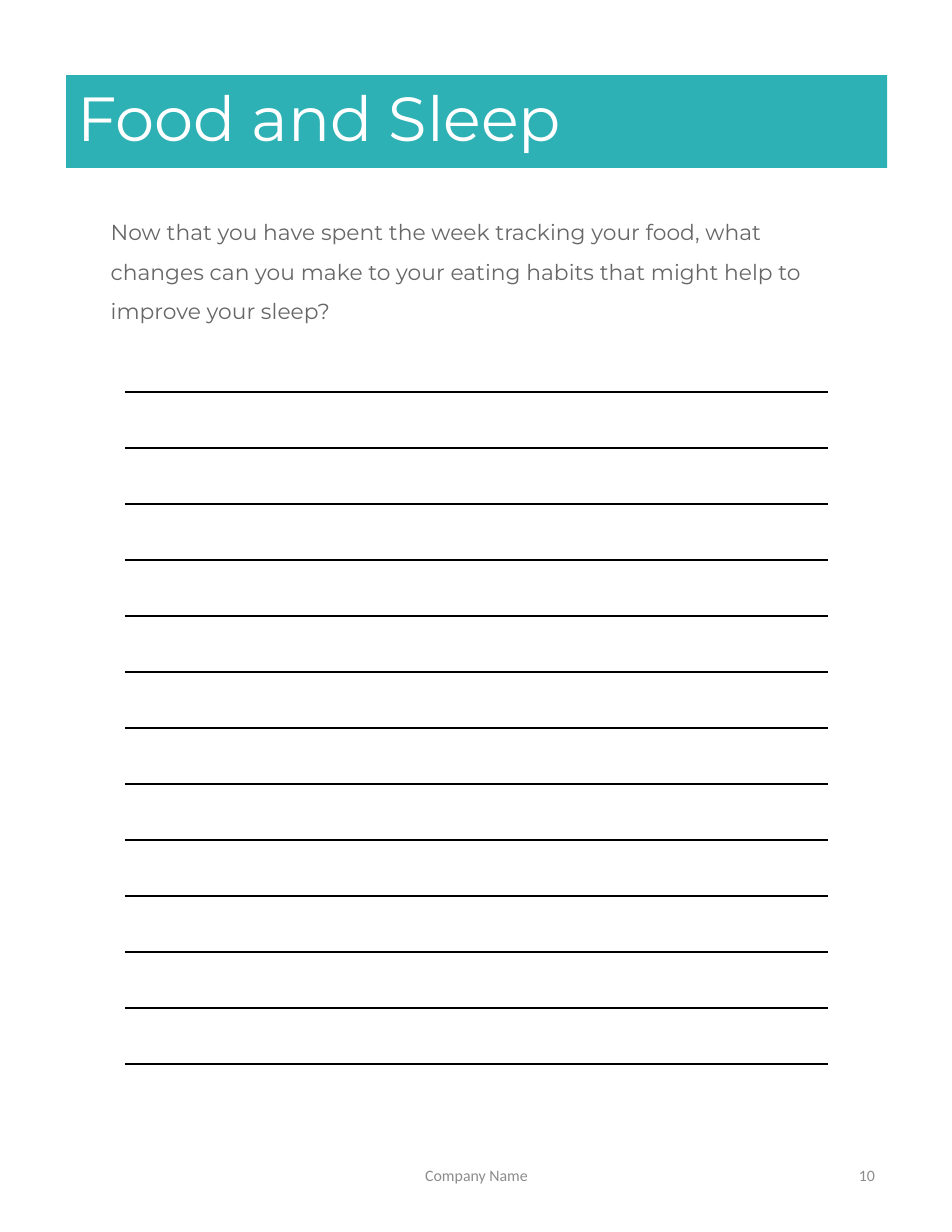
from dataclasses import dataclass

from lxml import etree
from pptx import Presentation
from pptx import util as u
from pptx.dml.color import RGBColor
from pptx.enum import text
from pptx.oxml.ns import qn

WIDTH, HEIGHT = 8.5, 11
PLAIN_TABLE = "{2D5ABB26-0587-4C30-8999-92F81FD0307C}"


@dataclass(frozen=True)
class Theme:
    """Colours, fonts and type sizes of the workbook page."""
    teal: str = "2DB1B5"
    white: str = "FFFFFF"
    body: str = "676767"
    muted: str = "8C8C8C"
    rule: str = "000000"
    main_font: str = "Montserrat"
    footer_font: str = "Calibri"
    title_size: float = 40
    body_size: float = 14
    footer_size: float = 10.2
    rule_width: float = 1


THEME = Theme()


def inches(box):
    """Convert a left, top, width, height box to lengths."""
    return [u.Inches(v) for v in box]


def write(sp, words, font, size, color, align=text.PP_ALIGN.LEFT,
          spacing=1.0, anchor=text.MSO_ANCHOR.MIDDLE):
    """Fill a shape with one formatted paragraph."""
    tf = sp.text_frame
    tf.word_wrap = True
    tf.auto_size = text.MSO_AUTO_SIZE.NONE
    tf.vertical_anchor = anchor
    p = tf.paragraphs[0]
    p.text = words
    p.alignment, p.line_spacing = align, spacing
    p.font.name, p.font.size = font, u.Pt(size)
    p.font.color.rgb = RGBColor.from_string(color)


def add_title(s, box, words):
    """Place the title placeholder as a coloured banner."""
    sp = s.shapes.title
    sp.left, sp.top, sp.width, sp.height = inches(box)
    sp.fill.solid()
    sp.fill.fore_color.rgb = RGBColor.from_string(THEME.teal)
    write(sp, words, THEME.main_font, THEME.title_size, THEME.white, spacing=0.9)


def add_prompt(s, box, words):
    """Place the question above the writing lines."""
    write(s.shapes.add_textbox(*inches(box)), words, THEME.main_font,
          THEME.body_size, THEME.body, spacing=1.5, anchor=text.MSO_ANCHOR.TOP)


def rule_below(cell):
    """Draw the bottom border of a table cell."""
    ln = etree.Element(qn("a:lnB"), w=str(u.Pt(THEME.rule_width)))
    fill = etree.SubElement(ln, qn("a:solidFill"))
    etree.SubElement(fill, qn("a:srgbClr"), val=THEME.rule)
    cell.fill.background()
    cell._tc.get_or_add_tcPr().insert(0, ln)


def add_writing_lines(s, box, count):
    """Fill the box with equal table rows ruled along the bottom."""
    table = s.shapes.add_table(count, 1, *inches(box)).table
    table.first_row = table.horz_banding = False
    table._tbl.tblPr.find(qn("a:tableStyleId")).text = PLAIN_TABLE
    for row in table.rows:
        row.height = u.Inches(box[3] / count)
        rule_below(row.cells[0])


def add_footer(s, box, words, align):
    """Place one footer item."""
    write(s.shapes.add_textbox(*inches(box)), words, THEME.footer_font,
          THEME.footer_size, THEME.muted, align=align)


def main():
    """Build and save the journal page."""
    prs = Presentation()
    prs.slide_width, prs.slide_height = u.Inches(WIDTH), u.Inches(HEIGHT)
    s = prs.slides.add_slide(prs.slide_layouts[5])
    add_title(s, (0.59, 0.67, 7.33, 0.83), "Food and Sleep")
    add_prompt(s, (0.89, 1.79, 6.73, 1.49),
               "Now that you have spent the week tracking your food, what changes "
               "can you make to your eating habits that might help to improve "
               "your sleep?")
    add_footer(s, (6, 10.2, 1.91, 0.59), "10", text.PP_ALIGN.RIGHT)
    add_writing_lines(s, (1.12, 3, 6.27, 6.5), 13)
    add_footer(s, (2.82, 10.2, 2.87, 0.59), "Company Name", text.PP_ALIGN.CENTER)
    prs.save("out.pptx")


if __name__ == "__main__":
    main()
